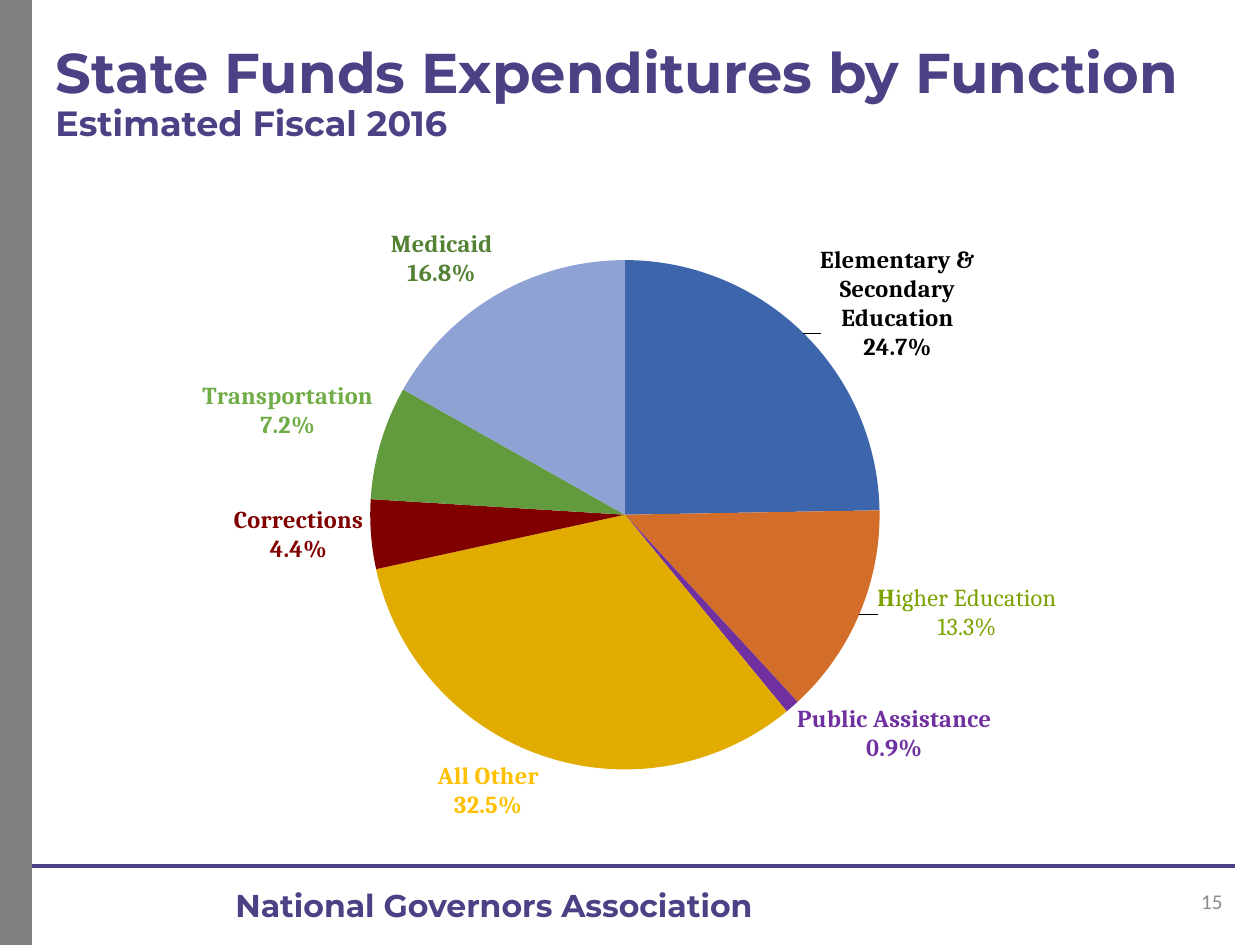
from lxml import etree
from pptx import Presentation
from pptx.chart.data import CategoryChartData
from pptx.dml.color import RGBColor
from pptx.enum.chart import XL_CHART_TYPE, XL_LABEL_POSITION as LabelPos
from pptx.enum.shapes import MSO_CONNECTOR
from pptx.enum.text import MSO_ANCHOR, PP_ALIGN
from pptx.oxml import parse_xml
from pptx.oxml.ns import nsdecls, qn
from pptx.util import Inches, Pt

COLORS = {
    "purple": "4C4185", "gray": "808080", "number": "8C8C8C", "black": "000000",
    "blue": "3D65AC", "orange": "D26E2A", "violet": "7030A0", "gold": "E2AB00",
    "maroon": "800000", "green": "629A3E", "periwinkle": "8FA2D4",
    "lime": "7AA300", "yellow": "FFC000", "leaf": "70AD47", "forest": "548235",
}
TITLE = [("State Funds Expenditures by Function", 32), ("Estimated Fiscal 2016", 20)]
FOOTER = "National Governors Association"
PAGE = "15"
SLICES = [
    ("Elementary & Secondary Education", 24.7, "blue", "black"),
    ("Higher Education", 13.4, "orange", "lime"),
    ("Public Assistance", 0.9, "violet", "violet"),
    ("All Other", 32.5, "gold", "yellow"),
    ("Corrections", 4.4, "maroon", "maroon"),
    ("Transportation", 7.2, "green", "leaf"),
    ("Medicaid", 16.8, "periwinkle", "forest"),
]
CUSTOM_LABELS = {"Higher Education": [[("H", True), ("igher Education", False)], [("13.3%", False)]]}
LABEL_SHIFTS = {0: {"x": 0.01, "y": 0.05}, 1: {"x": 0.01, "y": -0.05}, 2: {"x": 0, "y": -0.01}}
RULES = [((0.17, 6.87), (9.8, 6.87), "purple", 2.25), ((0.12, 7.5), (0.12, 0), "gray", 19.25)]
PLOT = {"x": 0.28, "y": 0.14, "w": 0.44, "h": 0.75}


def rgb(name):
    return RGBColor.from_string(COLORS[name])


def style(font, size, face, color, bold=False):
    font.size, font.name, font.bold = Pt(size), face, bold
    font.color.rgb = rgb(color)


def add_rule(slide, start, end, color, width):
    c = slide.shapes.add_connector(MSO_CONNECTOR.STRAIGHT, *map(Inches, start + end))
    c.line.color.rgb = rgb(color)
    c.line.width = Pt(width)
    etree.SubElement(c._element.spPr, qn("a:effectLst"))


def add_text(slide, box, text, size, face, color, bold=False, align=PP_ALIGN.LEFT, anchor=MSO_ANCHOR.TOP):
    tf = slide.shapes.add_textbox(*map(Inches, box)).text_frame
    tf.word_wrap, tf.vertical_anchor = True, anchor
    p = tf.paragraphs[0]
    p.text, p.alignment = text, align
    style(p.runs[0].font, size, face, color, bold)


def set_title(slide):
    title = slide.shapes.title
    title.left, title.top, title.width, title.height = map(Inches, (0.34, 0.31, 9.75, 0.75))
    tf = title.text_frame
    tf.word_wrap, tf.vertical_anchor = True, MSO_ANCHOR.TOP
    p = tf.paragraphs[0]
    p.text = "\v".join(text for text, size in TITLE)
    p.alignment, p.line_spacing = PP_ALIGN.LEFT, 0.9
    for r, (text, size) in zip(p.runs, TITLE):
        style(r.font, size, "Montserrat", "purple", True)


def show_category_and_percent(labels):
    for tag, value in (("showVal", 0), ("showCatName", 1), ("showPercent", 1)):
        labels.find(qn(f"c:{tag}")).set("val", str(value))
    separator = parse_xml(f'<c:separator {nsdecls("c")}>\n</c:separator>')
    labels.find(qn("c:showBubbleSize")).addnext(separator)


def manual_layout(sizes, modes=""):
    values = "".join(f'<c:{key} val="{value}"/>' for key, value in sizes.items())
    return parse_xml(f'<c:layout {nsdecls("c")}><c:manualLayout>{modes}{values}</c:manualLayout></c:layout>')


def add_label(point, name, color):
    label = point.data_label
    if name in CUSTOM_LABELS:
        tf = label.text_frame
        for i, line in enumerate(CUSTOM_LABELS[name]):
            p = tf.add_paragraph() if i else tf.paragraphs[0]
            for text, bold in line:
                r = p.add_run()
                r.text = text
                style(r.font, 13.9, "Cambria", color, bold)
    else:
        style(label.font, 13.9, "Cambria", color, True)
    label.position = LabelPos.OUTSIDE_END


def finish_labels(series):
    labels = series.data_labels
    style(labels.font, 13.9, "Cambria", "black", True)
    labels.number_format, labels.number_format_is_linked = "0.0%", False
    labels.position = LabelPos.OUTSIDE_END
    show_category_and_percent(series._element.find(qn("c:dLbls")))
    for i, label in enumerate(series._element.iter(qn("c:dLbl"))):
        show_category_and_percent(label)
        fmt = parse_xml(f'<c:numFmt {nsdecls("c")} formatCode="0.0%" sourceLinked="0"/>')
        index, text = label.find(qn("c:idx")), label.find(qn("c:tx"))
        (index if text is None else text).addnext(fmt)
        if i in LABEL_SHIFTS:
            index.addnext(manual_layout(LABEL_SHIFTS[i]))


def add_pie(slide):
    data = CategoryChartData(number_format="0.0")
    data.categories = [name for name, *rest in SLICES]
    data.add_series("Series 1", [value for name, value, *rest in SLICES])
    box = map(Inches, (0.34, 1.31, 9.24, 5.39))
    chart = slide.shapes.add_chart(XL_CHART_TYPE.PIE, *box, data).chart
    chart.has_legend = chart.has_title = False
    style(chart.font, 17.9, "Calibri", "black")
    plot = chart.plots[0]
    plot.vary_by_categories = True
    series = plot.series[0]
    for i, (name, value, fill, label_color) in enumerate(SLICES):
        point = series.points[i]
        point.format.fill.solid()
        point.format.fill.fore_color.rgb = rgb(fill)
        point.format.line.fill.background()
        add_label(point, name, label_color)
    finish_labels(series)
    area = plot._element.getparent()
    for old in area.findall(qn("c:layout")):
        area.remove(old)
    modes = '<c:layoutTarget val="inner"/><c:xMode val="edge"/><c:yMode val="edge"/>'
    area.insert(0, manual_layout(PLOT, modes))


def main():
    prs = Presentation()
    prs.slide_width, prs.slide_height = Inches(10), Inches(7.5)
    slide = prs.slides.add_slide(prs.slide_layouts[5])
    for rule in RULES:
        add_rule(slide, *rule)
    add_text(slide, (1.77, 6.98, 5.67, 0.4), FOOTER, 18, "Montserrat", "purple", True)
    add_text(slide, (7.55, 6.95, 2.25, 0.4), PAGE, 12, "Calibri", "number",
             align=PP_ALIGN.RIGHT, anchor=MSO_ANCHOR.MIDDLE)
    set_title(slide)
    add_pie(slide)
    prs.save("out.pptx")


if __name__ == "__main__":
    main()
